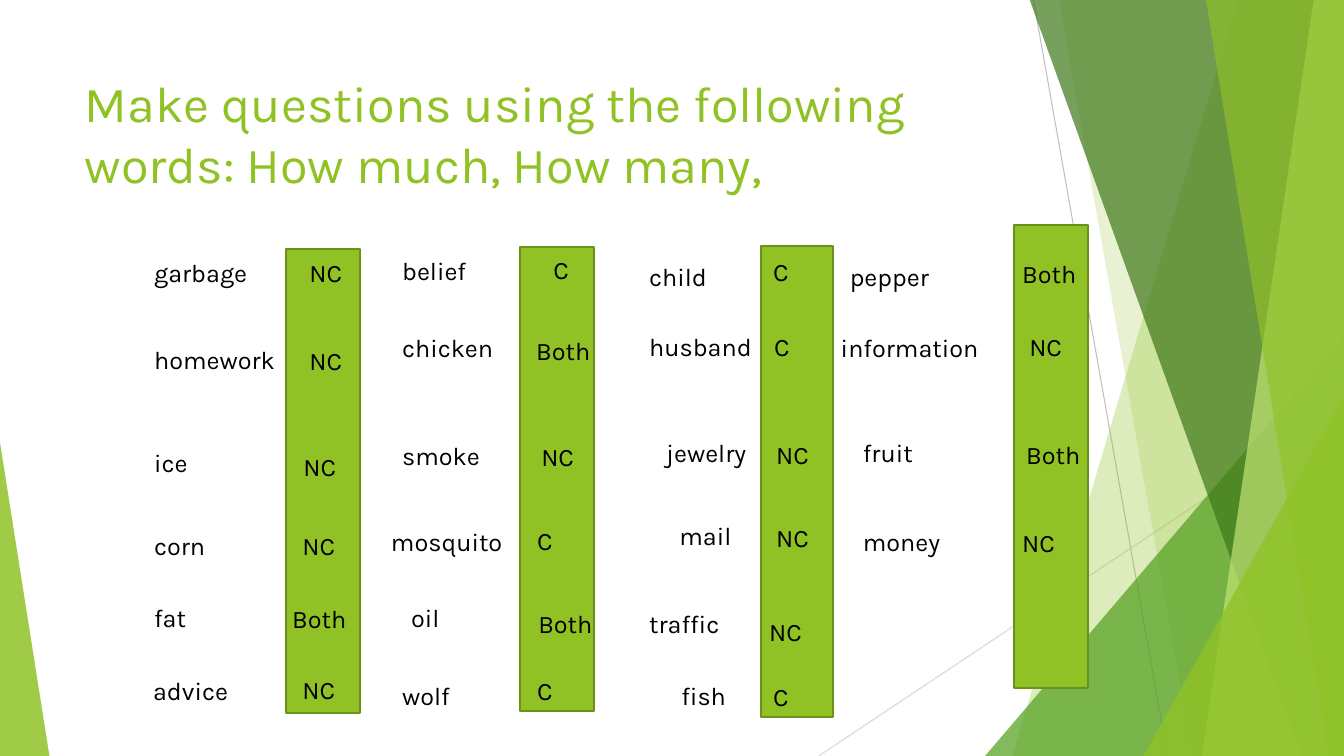
"""Build a slide that sorts nouns into countable and uncountable."""
import pptx
import pptx.util
import pptx.dml.color
import pptx.enum.shapes
import pptx.enum.text
import pptx.oxml

Inches = pptx.util.Inches
Pt = pptx.util.Pt
Kind = pptx.enum.shapes.MSO_SHAPE
GREEN = "90C226"
FONT = "Karla"


def tint(fill, color):
    fill.solid()
    fill.fore_color.rgb = pptx.dml.color.RGBColor.from_string(color)


def write(text, box, size=18, color="000000", fit=True):
    frame = box.text_frame
    frame.word_wrap = True
    frame.vertical_anchor = pptx.enum.text.MSO_ANCHOR.TOP
    modes = pptx.enum.text.MSO_AUTO_SIZE
    frame.auto_size = modes.SHAPE_TO_FIT_TEXT if fit else modes.NONE
    line = frame.paragraphs[0]
    line.alignment = pptx.enum.text.PP_ALIGN.LEFT
    run = line.add_run()
    run.text = text
    run.font.name = FONT
    run.font.size = Pt(size)
    tint(run.font.fill, color)


deck = pptx.Presentation()
deck.slide_width = Inches(13.33)
deck.slide_height = Inches(7.5)
slide = deck.slides.add_slide(deck.slide_layouts[5])
shapes = slide.shapes

rays = [
    (10.25, 0, 11.58, 7.5, "BFBFBF"),
    (13.33, 4.03, 8.12, 7.5, "D9D9D9"),
]
for *ends, color in rays:
    ray = shapes.add_connector(
        pptx.enum.shapes.MSO_CONNECTOR.STRAIGHT, *map(Inches, ends))
    tint(ray.line.fill, color)
    ray.line.width = Pt(0.75)
    ray.element.spPr.append(pptx.oxml.parse_xml(
        '<a:effectLst xmlns:a='
        '"http://schemas.openxmlformats.org/drawingml/2006/main"/>'))

# Bands give top and bottom x; peaks give left, top, width and apex.
bands = [
    ("band", (12.28, 10.04), GREEN, 30),
    ("band", (10.5, 11.83), GREEN, 20),
    ("peak", (9.77, 3.33, 3.56, 1), "54A021", 72),
    ("band", (10.21, 12.91), "3F7819", 70),
    ("band", (13.03, 11.92), "C0E474", 70),
    ("band", (11.96, 13.18), GREEN, 65),
    ("peak", (11.34, 3.93, 1.99, 1), GREEN, 80),
    ("peak", (0, 4.39, 0.49, 0), GREEN, 85),
]
for kind, place, color, alpha in bands:
    if kind == "band":
        high, low = place
        path = shapes.build_freeform(Inches(high), Inches(-0.01))
        corners = [(13.33, -0.01), (13.33, 7.5), (low, 7.5)]
        path.add_line_segments([(Inches(x), Inches(y)) for x, y in corners])
        facet = path.convert_to_shape()
    else:
        left, top, width, apex = place
        facet = shapes.add_shape(
            Kind.ISOSCELES_TRIANGLE, Inches(left), Inches(top),
            Inches(width), Inches(7.5 - top))
        facet.adjustments[0] = apex
    facet.shadow.inherit = False
    facet.line.fill.background()
    tint(facet.fill, color)
    shade = facet.element.xpath("./p:spPr/a:solidFill/a:srgbClr")[0]
    shade.append(pptx.oxml.parse_xml(
        '<a:alpha xmlns:a='
        '"http://schemas.openxmlformats.org/drawingml/2006/main" '
        f'val="{alpha * 1000}"/>'))

bars = [
    (10.06, 2.23, 0.73, 4.6),
    (7.55, 2.44, 0.71, 4.67),
    (5.16, 2.45, 0.73, 4.6),
    (2.84, 2.47, 0.73, 4.6),
]
for place in bars:
    bar = shapes.add_shape(Kind.RECTANGLE, *map(Inches, place))
    bar.shadow.inherit = False
    tint(bar.fill, GREEN)
    tint(bar.line.fill, "6B901C")
    bar.line.width = Pt(1.5)

title = shapes.title
title.left, title.top = Inches(0.74), Inches(0.67)
title.width, title.height = Inches(9.4), Inches(1.44)
write("Make questions using the following words: How much, How many,",
      title, size=36, color=GREEN, fit=False)

words = [
    ("garbage", 1.43, 2.5, 1.33, "NC", 2.97, 2.5),
    ("homework", 1.43, 3.37, 1.71, "NC", 2.97, 3.38),
    ("ice", 1.43, 4.39, 1.03, "NC", 2.91, 4.43),
    ("corn", 1.43, 5.21, 1.33, "NC", 2.9, 5.21),
    ("fat", 1.43, 5.93, 0.72, "Both", 2.8, 5.94),
    ("advice", 1.42, 6.65, 1.68, "NC", 2.9, 6.64),
    ("belief", 3.89, 2.48, 1.33, "C", 5.39, 2.47),
    ("chicken", 3.89, 3.25, 1.33, "Both", 5.22, 3.28),
    ("smoke", 3.89, 4.32, 1.33, "NC", 5.27, 4.33),
    ("mosquito", 3.78, 5.17, 1.43, "C", 5.23, 5.16),
    ("oil", 3.98, 5.93, 1.33, "Both", 5.24, 5.99),
    ("wolf", 3.89, 6.7, 1.21, "C", 5.23, 6.65),
    ("child", 6.34, 2.54, 1.33, "C", 7.57, 2.49),
    ("husband", 6.34, 3.24, 1.33, "C", 7.58, 3.24),
    ("jewelry", 6.51, 4.29, 1.33, "NC", 7.6, 4.31),
    ("mail", 6.64, 5.11, 1.33, "NC", 7.6, 5.13),
    ("traffic", 6.34, 5.99, 1.33, "NC", 7.53, 6.07),
    ("fish", 6.66, 6.7, 1.21, "C", 7.57, 6.71),
    ("pepper", 8.33, 2.54, 1.33, "Both", 10.04, 2.51),
    ("information", 8.24, 3.25, 1.68, "NC", 10.11, 3.24),
    ("fruit", 8.46, 4.29, 1.04, "Both", 10.08, 4.31),
    ("money", 8.46, 5.17, 1.04, "NC", 10.04, 5.18),
]
spans = {"C": 0.36, "NC": 0.58, "Both": 0.78}
for word, left, top, width, key, x, y in words:
    pair = [(word, left, top, width), (key, x, y, spans[key])]
    for text, *place in pair:
        box = shapes.add_textbox(*map(Inches, place), Inches(0.4))
        write(text, box)

deck.save("out.pptx")
